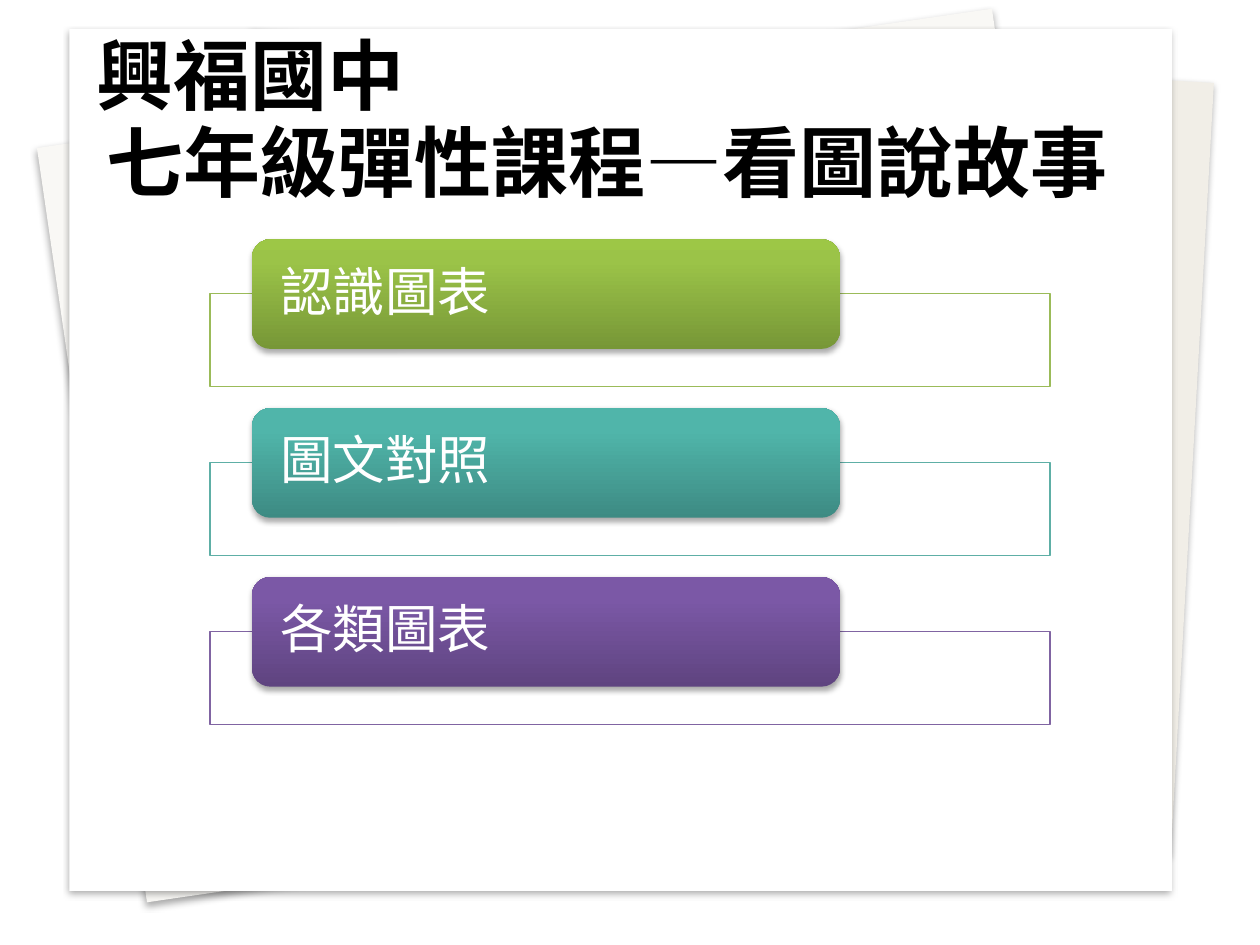
from lxml.etree import SubElement
from pptx import Presentation
from pptx.dml.color import RGBColor
from pptx.enum.shapes import MSO_SHAPE as Kind
from pptx.enum.text import MSO_ANCHOR as Anchor, MSO_AUTO_SIZE as Fit, PP_ALIGN as Align
from pptx.oxml.ns import qn
from pptx.util import Pt

FONT = "Noto Sans CJK JP"
WHITE = RGBColor(0xFF, 0xFF, 0xFF)
BLACK = RGBColor(0, 0, 0)
CREAM = RGBColor(0xF9, 0xF8, 0xF5)
SAND = RGBColor(0xF1, 0xEE, 0xE7)
GREEN = RGBColor(0x9B, 0xBB, 0x59)
TEAL = RGBColor(0x5E, 0xAF, 0xA6)
PURPLE = RGBColor(0x80, 0x64, 0xA2)

# Paper sheets: left, top, width, height, turn, colour
SHEETS = [
    (130.3, 31.7, 551.5, 441.4, 3.2, SAND),
    (49.7, 42.5, 551.5, 435.6, 351.7, CREAM),
    (39.6, 16.6, 630, 492.5, 0, WHITE),
]
# Topics: text, frame colour, gradient from bottom to top
STOPS = (0, 80, 100)
TOPICS = [
    ("認識圖表", GREEN, ("779737", "9BC348", "9DC746")),
    ("圖文對照", TEAL, ("3D8B83", "50B5AA", "4EB8AC")),
    ("各類圖表", PURPLE, ("5F4480", "7B58A6", "7C57A8")),
]
# Title lines: text, left, top
TITLES = [("七年級彈性課程—看圖說故事", 54, 61.9), ("興福國中", 48.2, 12.2)]

# Topic grid
LEFT, TOP, STEP = 120, 136.8, 96.5
FRAME_W, FRAME_H, DROP = 480, 53.3, 31
BAR_W, BAR_H, INDENT = 336, 62.6, 24

deck = Presentation()
deck.slide_width, deck.slide_height = Pt(720), Pt(540)
slide = deck.slides.add_slide(deck.slide_layouts[6])
shapes = slide.shapes


def add_box(kind, x, y, w, h, fill=None):
    box = shapes.add_shape(kind, Pt(x), Pt(y), Pt(w), Pt(h))
    box.shadow.inherit = False
    box.line.fill.background()
    if fill is not None:
        box.fill.solid()
        box.fill.fore_color.rgb = fill
    return box


def add_alpha(color, percent):
    SubElement(color, qn("a:alpha"), val=str(percent * 1000))


def cast(box, alpha, blur, dist):
    effects = box._element.spPr.find(qn("a:effectLst"))
    shade = SubElement(effects, qn("a:outerShdw"), blurRad=str(Pt(blur)),
                       dist=str(Pt(dist)), dir="5400000", algn="t", rotWithShape="0")
    add_alpha(SubElement(shade, qn("a:srgbClr"), val="000000"), alpha)


def blend(box, colors):
    box.fill.gradient()
    grad = box._element.spPr.find(qn("a:gradFill"))
    stops = grad.find(qn("a:gsLst"))
    for old in list(stops):
        stops.remove(old)
    for pos, color in zip(STOPS, colors):
        stop = SubElement(stops, qn("a:gs"), pos=str(pos * 1000))
        SubElement(stop, qn("a:srgbClr"), val=color)
    grad.find(qn("a:lin")).set("ang", "16200000")


def write(frame, text, size, color, bold=False):
    para = frame.paragraphs[0]
    para.alignment = Align.LEFT
    run = para.add_run()
    run.text = text
    font = run.font
    font.name, font.size, font.bold = FONT, Pt(size), bold
    font.color.rgb = color
    SubElement(run._r.get_or_add_rPr(), qn("a:ea"), typeface=FONT)
    return para


# Stacked paper
for x, y, w, h, turn, color in SHEETS:
    sheet = add_box(Kind.RECTANGLE, x, y, w, h, color)
    sheet.rotation = turn
    cast(sheet, 32, 3.5, 2.2)

# Topic frames and bars
for i, (text, color, colors) in enumerate(TOPICS):
    y = TOP + i * STEP
    frame = add_box(Kind.RECTANGLE, LEFT, y + DROP, FRAME_W, FRAME_H, WHITE)
    add_alpha(frame._element.spPr.find(qn("a:solidFill"))[0], 90)
    frame.line.color.rgb = color
    frame.line.width = Pt(0.75)

    bar = add_box(Kind.ROUNDED_RECTANGLE, LEFT + INDENT, y, BAR_W, BAR_H)
    blend(bar, colors)
    cast(bar, 35, 3.1, 1.8)
    body = bar.text_frame
    body.word_wrap = True
    body.vertical_anchor = Anchor.MIDDLE
    body.margin_left = body.margin_right = Pt(13)
    body.margin_top = body.margin_bottom = 0
    write(body, text, 30, WHITE).line_spacing = 0.9

# Title
for text, x, y in TITLES:
    body = shapes.add_textbox(Pt(x), Pt(y), Pt(629.3), Pt(60.5)).text_frame
    body.word_wrap = True
    body.auto_size = Fit.SHAPE_TO_FIT_TEXT
    write(body, text, 44, BLACK, True)

deck.save("out.pptx")
